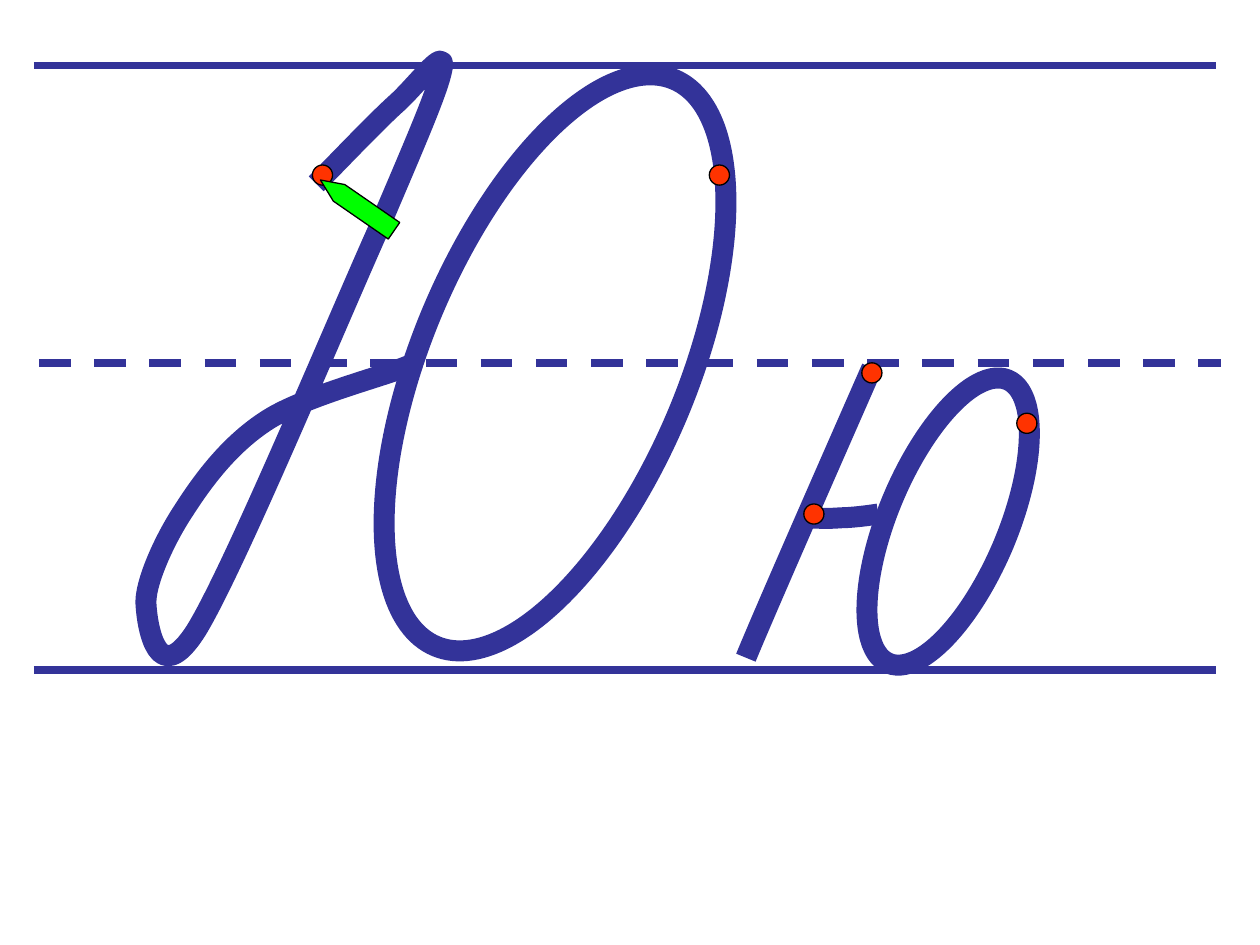
import pptx
import pptx.dml.color
import pptx.enum.dml
import pptx.enum.shapes
import pptx.oxml
import pptx.oxml.ns
import pptx.util

Inches = pptx.util.Inches
Pt = pptx.util.Pt
qn = pptx.oxml.ns.qn
KIND = pptx.enum.shapes.MSO_SHAPE
DASH = pptx.enum.dml.MSO_LINE.DASH
COLORS = {"ink": "333399", "dot": "FF3300", "pen": "00FF00", "edge": "000000"}
RULE = {"width": Pt(4.5)}
DASHED = {"width": Pt(4.5), "dash_style": DASH}
STROKE = {"width": Pt(12)}
THIN = {"width": Pt(0.75)}
DOT = 0.16

CAPITAL = [
    (3.25, 2.9),
    (3.07, 2.98), (2.43, 3.14), (2.13, 3.33),
    (1.83, 3.52), (1.62, 3.8), (1.46, 4.05),
    (1.3, 4.29), (1.14, 4.65), (1.16, 4.81),
    (1.17, 4.97), (1.25, 5.49), (1.56, 5),
    (1.86, 4.51), (2.66, 2.59), (2.99, 1.85),
    (3.31, 1.1), (3.48, 0.71), (3.51, 0.54),
    (3.54, 0.36), (3.32, 0.66), (3.16, 0.81),
    (2.99, 0.96), (2.65, 1.32), (2.51, 1.46),
]
STEM = [(5.92, 5.22), (6.08, 4.83), (6.71, 3.4), (6.92, 2.92)]
BAR = [
    (6.38, 4.11),
    (6.43, 4.11), (6.57, 4.12), (6.67, 4.11),
    (6.76, 4.11), (6.91, 4.09), (6.97, 4.08),
]


def rgb(name):
    return pptx.dml.color.RGBColor.from_string(COLORS[name])


def set_line(line, color, style):
    line.color.rgb = rgb(color)
    for key, value in style.items():
        setattr(line, key, value)


def paint(shape, fill, color, style):
    shape.shadow.inherit = False
    if fill:
        shape.fill.solid()
        shape.fill.fore_color.rgb = rgb(fill)
    else:
        shape.fill.background()
    set_line(shape.line, color, style)


def add_rule(shapes, left, top, style):
    ends = [Inches(n) for n in (left, top, left + 9.38, top)]
    rule = shapes.add_connector(pptx.enum.shapes.MSO_CONNECTOR.STRAIGHT, *ends)
    set_line(rule.line, "ink", style)
    props = rule._element.spPr
    props.append(pptx.oxml.parse_xml(
        "<a:effectLst %s/>" % pptx.oxml.ns.nsdecls("a")))


def bend(shape):
    sides = list(shape._element.iter(qn("a:lnTo")))
    for i in range(0, len(sides), 3):
        curve = pptx.oxml.parse_xml(
            "<a:cubicBezTo %s/>" % pptx.oxml.ns.nsdecls("a"))
        sides[i].addprevious(curve)
        for side in sides[i:i + 3]:
            curve.append(side[0])
            side.getparent().remove(side)


def add_curve(shapes, points):
    start, *rest = [(Inches(x), Inches(y)) for x, y in points]
    builder = shapes.build_freeform(*start, scale=1.0)
    builder.add_line_segments(rest, close=False)
    curve = builder.convert_to_shape()
    bend(curve)
    paint(curve, None, "ink", STROKE)


def add_form(shapes, kind, box, fill, color, style, turn=0):
    form = shapes.add_shape(kind, *[Inches(n) for n in box])
    form.rotation = turn
    paint(form, fill, color, style)
    return form


def add_oval(shapes, *box):
    add_form(shapes, KIND.OVAL, box, None, "ink", STROKE, 22.8)


def add_dot(shapes, left, top):
    add_form(shapes, KIND.FLOWCHART_CONNECTOR, (left, top, DOT, DOT),
             "dot", "edge", THIN)


def add_pen(shapes):
    pen = add_form(shapes, KIND.PENTAGON, (2.48, 1.55, 0.71, 0.16),
                   "pen", "edge", THIN, 214.6)
    pen.adjustments[0] = 1.124


def main():
    deck = pptx.Presentation()
    deck.slide_width, deck.slide_height = Inches(10), Inches(7.5)
    shapes = deck.slides.add_slide(deck.slide_layouts[6]).shapes

    rules = shapes.add_group_shape().shapes
    for left, top, style in ((0.27, 0.52, RULE), (0.31, 2.88, DASHED),
                             (0.27, 5.32, RULE)):
        add_rule(rules, left, top, style)

    add_curve(shapes, CAPITAL)
    add_oval(shapes, 3.35, 0.44, 2.11, 4.88)
    for left in (2.48, 5.63):
        add_dot(shapes, left, 1.31)

    small = shapes.add_group_shape().shapes
    for points in (STEM, BAR):
        add_curve(small, points)
    add_oval(small, 7.05, 2.92, 0.95, 2.44)
    for left, top in ((6.38, 4), (8.07, 3.28), (6.84, 2.88)):
        add_dot(small, left, top)

    add_pen(shapes)
    deck.save("out.pptx")


if __name__ == "__main__":
    main()
